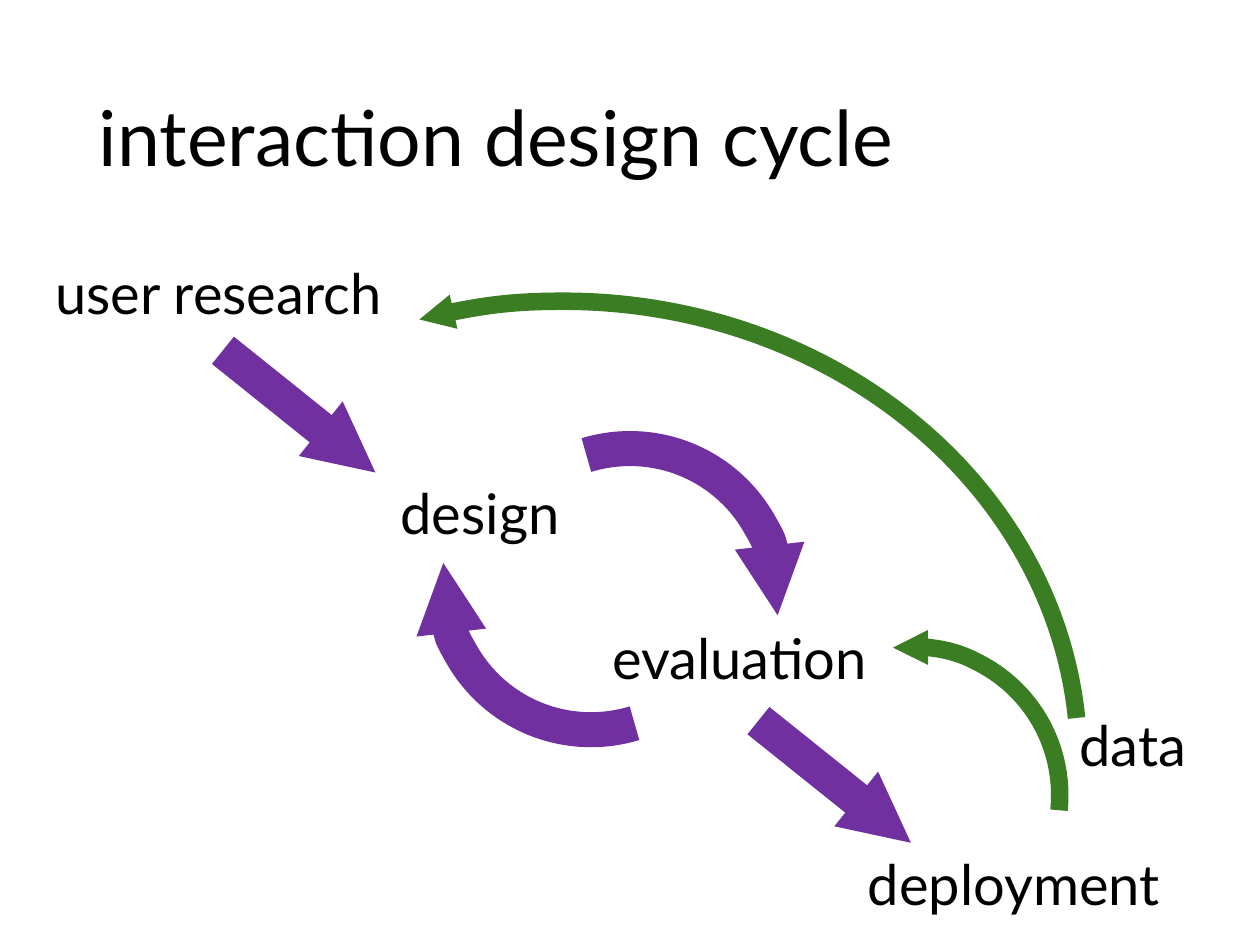
from typing import NamedTuple

from lxml import etree
from pptx import Presentation
from pptx.dml.color import RGBColor
from pptx.enum.shapes import MSO_CONNECTOR, MSO_SHAPE
from pptx.enum.text import MSO_ANCHOR, MSO_AUTO_SIZE
from pptx.oxml.ns import qn
from pptx.util import Pt

ARC = MSO_SHAPE.ARC
LINE = MSO_CONNECTOR.STRAIGHT
MIDDLE = MSO_ANCHOR.MIDDLE
GROW = MSO_AUTO_SIZE.SHAPE_TO_FIT_TEXT
FIXED = MSO_AUTO_SIZE.NONE
FONT = "Lato"
BLACK, PURPLE, GREEN = "000000", "7030A0", "3B7D23"
TITLE = {"word_wrap": True, "auto_size": FIXED, "vertical_anchor": MIDDLE}
LABEL = {"word_wrap": False, "auto_size": GROW}
ADJ = 0.6


class Label(NamedTuple):
    text: str
    left: float
    top: float
    width: float
    height: float = 46
    size: float = 32
    frame: dict = LABEL
    para: dict = {}


class Curve(NamedTuple):
    left: float
    top: float
    width: float
    height: float
    start: float
    end: float
    color: str
    weight: float
    turn: float = 0
    flips: tuple = ()


class Arrow(NamedTuple):
    left: float
    top: float


LABELS = [
    Label("interaction design cycle", 49.5, 28.75, 621, 104.4, 44, TITLE,
          {"line_spacing": 0.9}),
    Label("design", 221.75, 270, 106.5),
    Label("evaluation", 342.75, 352.8, 160.5),
    Label("user research", 24.5, 144, 205.2),
    Label("deployment", 488.9, 481.7, 181.4),
    Label("data", 609.8, 402.5, 77),
]
CURVES = [
    Curve(275, 256.3, 170, 170, 252.97, 6.95, PURPLE, 20),
    Curve(252.7, 247, 170, 170, 252.97, 6.95, PURPLE, 20, 0, ("flipH", "flipV")),
    Curve(435.6, 369.4, 170, 170, 264.22, 6.95, GREEN, 10, 90, ("flipH",)),
    Curve(59.8, 139.7, 524.2, 589, 274.67, 18.1, GREEN, 10, 90, ("flipH",)),
]
ARROWS = [Arrow(127.4, 200.2), Arrow(433.4, 411.8)]
RUN = (87.1, 69.8)


def paint(value: str) -> RGBColor:
    """Turn a hex string into a colour."""
    return RGBColor.from_string(value)


def apply(target, values: dict) -> None:
    """Set each named value on the target."""
    for name, value in values.items():
        setattr(target, name, value)


def stroke(shape, color: str, weight: float) -> None:
    """Give a shape a solid line that ends in a small triangle."""
    shape.line.color.rgb = paint(color)
    shape.line.width = Pt(weight)
    tail = etree.SubElement(shape.element.spPr.get_or_add_ln(), qn("a:tailEnd"))
    for key, value in {"type": "triangle", "w": "sm", "len": "sm"}.items():
        tail.set(key, value)


def write(slide, item: Label) -> None:
    """Add a label as a text box."""
    box = slide.shapes.add_textbox(*map(Pt, item[1:5]))
    apply(box.text_frame, item.frame)
    para = box.text_frame.paragraphs[0]
    apply(para, item.para)
    run = para.add_run()
    run.text = item.text
    apply(run.font, {"name": FONT, "size": Pt(item.size)})
    run.font.color.rgb = paint(BLACK)


def bend(slide, item: Curve) -> None:
    """Add a curved arrow."""
    arc = slide.shapes.add_shape(ARC, *map(Pt, item[:4]))
    arc.adjustments[0] = item.start * ADJ
    arc.adjustments[1] = item.end * ADJ
    arc.rotation = item.turn
    for flip in item.flips:
        arc.element.spPr.xfrm.set(flip, "1")
    arc.fill.background()
    arc.shadow.inherit = False
    stroke(arc, item.color, item.weight)


def point(slide, item: Arrow) -> None:
    """Add a straight arrow."""
    ends = (*item, item.left + RUN[0], item.top + RUN[1])
    line = slide.shapes.add_connector(LINE, *map(Pt, ends))
    stroke(line, PURPLE, 20)
    etree.SubElement(line.element.spPr, qn("a:effectLst"))


def main() -> None:
    """Build and save the slide."""
    deck = Presentation()
    apply(deck, {"slide_width": Pt(720), "slide_height": Pt(540)})
    slide = deck.slides.add_slide(deck.slide_layouts[6])
    for draw, items in ((write, LABELS), (bend, CURVES), (point, ARROWS)):
        for item in items:
            draw(slide, item)
    deck.save("out.pptx")


if __name__ == "__main__":
    main()
